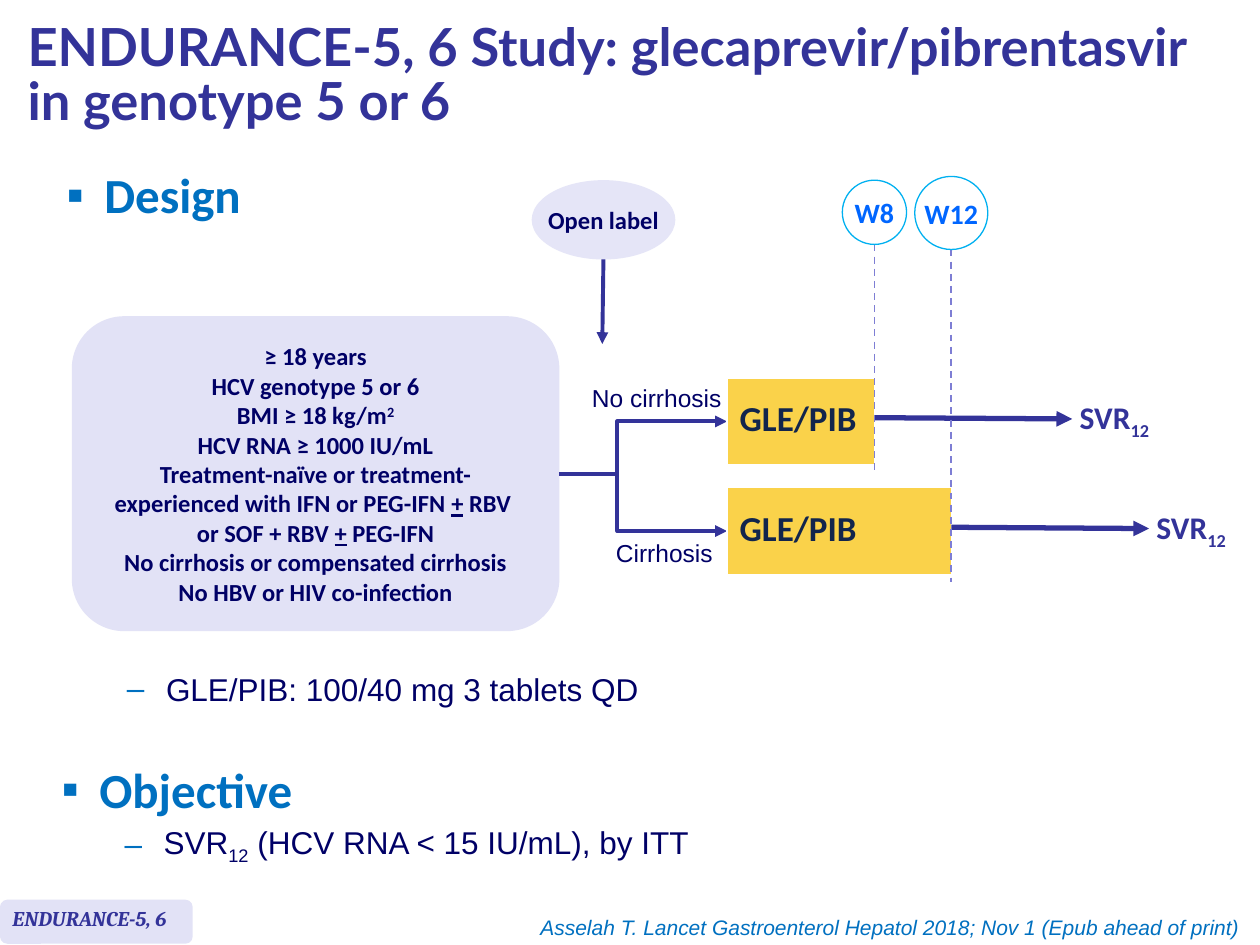
from lxml import etree
from pptx import Presentation
from pptx import util as u
from pptx.dml.color import RGBColor
from pptx.enum import dml, shapes, text
from pptx.oxml import ns

INDIGO, NAVY, BLUE, LAVENDER = "333399", "000066", "0070C0", "E2E2F6"
LEFT, CENTER, RIGHT = text.PP_ALIGN.LEFT, text.PP_ALIGN.CENTER, text.PP_ALIGN.RIGHT
MIDDLE = text.MSO_ANCHOR.MIDDLE

# Content: a paragraph is a string or a list of (text, mark) runs
TITLE = "ENDURANCE-5, 6 Study: glecaprevir/pibrentasvir \vin genotype 5 or 6"
CRITERIA = [
    "≥ 18 years",
    "HCV genotype 5 or 6",
    [("BMI ≥ 18 kg/m", None), ("2", "super")],
    "HCV RNA ≥ 1000 IU/mL",
    [("Treatment-naïve or treatment-experienced with IFN or PEG-IFN ", None),
     ("+", "under"), (" RBV \vor SOF + RBV ", None), ("+", "under"),
     (" PEG-IFN", None)],
    "No cirrhosis or compensated cirrhosis",
    "No HBV or HIV co-infection",
]
SVR = [("SVR", None), ("12", "sub")]
ENDPOINT = SVR + [(" (HCV RNA < 15 IU/mL), by ITT", None)]
CITATION = "Asselah T. Lancet Gastroenterol Hepatol 2018; Nov 1 (Epub ahead of print)"
HEADINGS = [("Design", 0.43, 1.26), ("Objective", 0.39, 5.98)]
DETAILS = [("GLE/PIB: 100/40 mg 3 tablets QD", "‒", 0.91, 5.27),
           (ENDPOINT, "–", 0.89, 6.48)]
# Arms: label, label left, label top, bar top, bar width
ARMS = [("No cirrhosis", 4.6, 2.99, 3.0, 1.17), ("Cirrhosis", 4.79, 4.22, 3.87, 1.78)]
# Weeks: label, centre x, circle top, diameter, end of dashed line
WEEKS = [("W12", 7.55, 1.4, 0.58, 4.62), ("W8", 6.94, 1.43, 0.51, 3.77)]
BAR_LEFT, BAR_HEIGHT, ARROW_LENGTH = 5.77, 0.69, 1.57
BRACKET_LEFT = 4.9

presentation = Presentation()
presentation.slide_width, presentation.slide_height = u.Inches(10), u.Inches(7.5)
slide = presentation.slides.add_slide(presentation.slide_layouts[6])


def color(value):
    return RGBColor.from_string(value)


def inches(*values):
    return [u.Inches(value) for value in values]


def add_bullet(paragraph, character, indent):
    properties = paragraph._p.get_or_add_pPr()
    properties.set("marL", str(u.Inches(indent)))
    properties.set("indent", str(-u.Inches(indent)))
    bullet_color = etree.SubElement(properties, ns.qn("a:buClr"))
    etree.SubElement(bullet_color, ns.qn("a:srgbClr"), val=BLUE)
    etree.SubElement(properties, ns.qn("a:buFont"), typeface="Arial")
    etree.SubElement(properties, ns.qn("a:buChar"), char=character)


def write(frame, paragraphs, size, font, ink, bold=False, italic=False,
          align=LEFT, spacing=None, bullet=None):
    for index, content in enumerate(paragraphs):
        paragraph = frame.paragraphs[0] if index == 0 else frame.add_paragraph()
        paragraph.alignment = align
        if spacing:
            paragraph.line_spacing = spacing
        if bullet:
            add_bullet(paragraph, *bullet)
        for words, mark in [(content, None)] if isinstance(content, str) else content:
            for part, line in enumerate(words.split("\v")):
                if part:
                    paragraph.add_line_break()
                run = paragraph.add_run()
                run.text = line
                run.font.size, run.font.name = u.Pt(size), font
                run.font.bold, run.font.italic = bold, italic
                run.font.color.rgb = color(ink)
                if mark == "under":
                    run.font.underline = True
                elif mark:
                    run._r.get_or_add_rPr().set(
                        "baseline", "30000" if mark == "super" else "-25000")


def add_text(place, paragraphs, *style, wrap=True, anchor=text.MSO_ANCHOR.TOP, **options):
    frame = slide.shapes.add_textbox(*inches(*place)).text_frame
    frame.word_wrap, frame.vertical_anchor = wrap, anchor
    write(frame, paragraphs, *style, **options)


def add_panel(kind, place, fill, outline=None):
    shape = slide.shapes.add_shape(kind, *inches(*place))
    shape.shadow.inherit = False
    shape.fill.solid()
    shape.fill.fore_color.rgb = color(fill)
    if outline:
        shape.line.color.rgb = color(outline)
        shape.line.width = u.Pt(0.75)
    else:
        shape.line.fill.background()
    shape.text_frame.vertical_anchor = MIDDLE
    return shape


def style_line(line, ink, width, ends=()):
    line.color.rgb = color(ink)
    line.width = u.Pt(width)
    for end in ends:
        etree.SubElement(line._get_or_add_ln(), ns.qn("a:" + end), type="triangle")


def add_line(start, end, ink, width, arrow=False):
    line = slide.shapes.add_connector(
        shapes.MSO_CONNECTOR.STRAIGHT, *inches(*start, *end))
    style_line(line.line, ink, width, ["tailEnd"] if arrow else [])
    etree.SubElement(line._element.spPr, ns.qn("a:effectLst"))
    return line


# Title, headings and details
add_text((0.12, 0.08, 9.88, 1.07), [TITLE], 30, "Lato", INDIGO, bold=True,
         spacing=0.85, anchor=MIDDLE)
for heading, left, top in HEADINGS:
    add_text((left, top, 3, 0.5), [heading], 28, "Calibri", BLUE, bold=True,
             bullet=("▪", 0.3))
for detail, dash, left, top in DETAILS:
    add_text((left, top, 6, 0.4), [detail], 18, "Arial", NAVY, bullet=(dash, 0.31))

# Open label marker
add_line((4.79, 2.02), (4.78, 2.73), INDIGO, 2.25, arrow=True)
marker = add_panel(shapes.MSO_SHAPE.OVAL, (4.22, 1.43, 1.14, 0.63), "E5E5F7")
marker.text_frame.word_wrap = False
write(marker.text_frame, ["Open label"], 14, "Calibri", NAVY, bold=True, align=CENTER)

# Inclusion criteria and the stem that leaves the box
criteria = add_panel(shapes.MSO_SHAPE.ROUNDED_RECTANGLE, (0.57, 2.51, 3.87, 2.5), LAVENDER)
criteria.text_frame.word_wrap = True
write(criteria.text_frame, CRITERIA, 14, "Calibri", NAVY, bold=True, align=CENTER)
stem = add_line((4.44, 3.76), (4.91, 3.76), INDIGO, 2.25)
stem.begin_connect(criteria, 3)

# Bracket to both arms
upper, lower = [top + BAR_HEIGHT / 2 for _, _, _, top, _ in ARMS]
builder = slide.shapes.build_freeform(*inches(BAR_LEFT, upper), scale=1.0)
builder.add_line_segments(
    [inches(BRACKET_LEFT, upper), inches(BRACKET_LEFT, lower), inches(BAR_LEFT, lower)],
    close=False)
bracket = builder.convert_to_shape()
bracket.shadow.inherit = False
bracket.fill.background()
style_line(bracket.line, INDIGO, 2.25, ["headEnd", "tailEnd"])

# Treatment arms
for label, label_left, label_top, top, width in ARMS:
    add_text((label_left, label_top, 1.24, 0.34), [label], 14, "Arial", NAVY)
    table = slide.shapes.add_table(
        1, 1, *inches(BAR_LEFT, top, width, BAR_HEIGHT)).table
    table.first_row = table.horz_banding = False
    cell = table.cell(0, 0)
    cell.fill.solid()
    cell.fill.fore_color.rgb = color("FAD24A")
    cell.vertical_anchor = MIDDLE
    write(cell.text_frame, ["GLE/PIB"], 20, "Calibri", "12254C", bold=True, spacing=0.8)
    end, middle = BAR_LEFT + width, top + BAR_HEIGHT / 2 - 0.03
    add_line((end, middle), (end + ARROW_LENGTH, middle + 0.01), INDIGO, 3, arrow=True)
    add_text((end + 1.53, top + 0.11, 0.78, 0.4), [SVR], 18, "Calibri", INDIGO,
             bold=True, wrap=False)

# Week markers
for label, center, top, diameter, bottom in WEEKS:
    guide = add_line((center, top + diameter), (center, bottom), "7E7ED4", 1)
    guide.line.dash_style = dml.MSO_LINE.DASH
    circle = add_panel(shapes.MSO_SHAPE.OVAL,
                       (center - diameter / 2, top, diameter, diameter), "FFFFFF", "00B0F0")
    circle.text_frame.word_wrap = False
    write(circle.text_frame, [label], 16, "Calibri", "0066FF", bold=True, align=CENTER)

# Footer tag and citation
add_panel(shapes.MSO_SHAPE.ROUNDED_RECTANGLE, (0, 7.14, 1.53, 0.35), LAVENDER)
add_text((0, 7.14, 1.68, 0.3), ["ENDURANCE-5, 6"], 12, "Cambria", INDIGO,
         bold=True, italic=True)
add_text((2.64, 7.21, 7.3, 0.29), [CITATION], 12, "Arial", BLUE, italic=True, align=RIGHT)

presentation.save("out.pptx")
